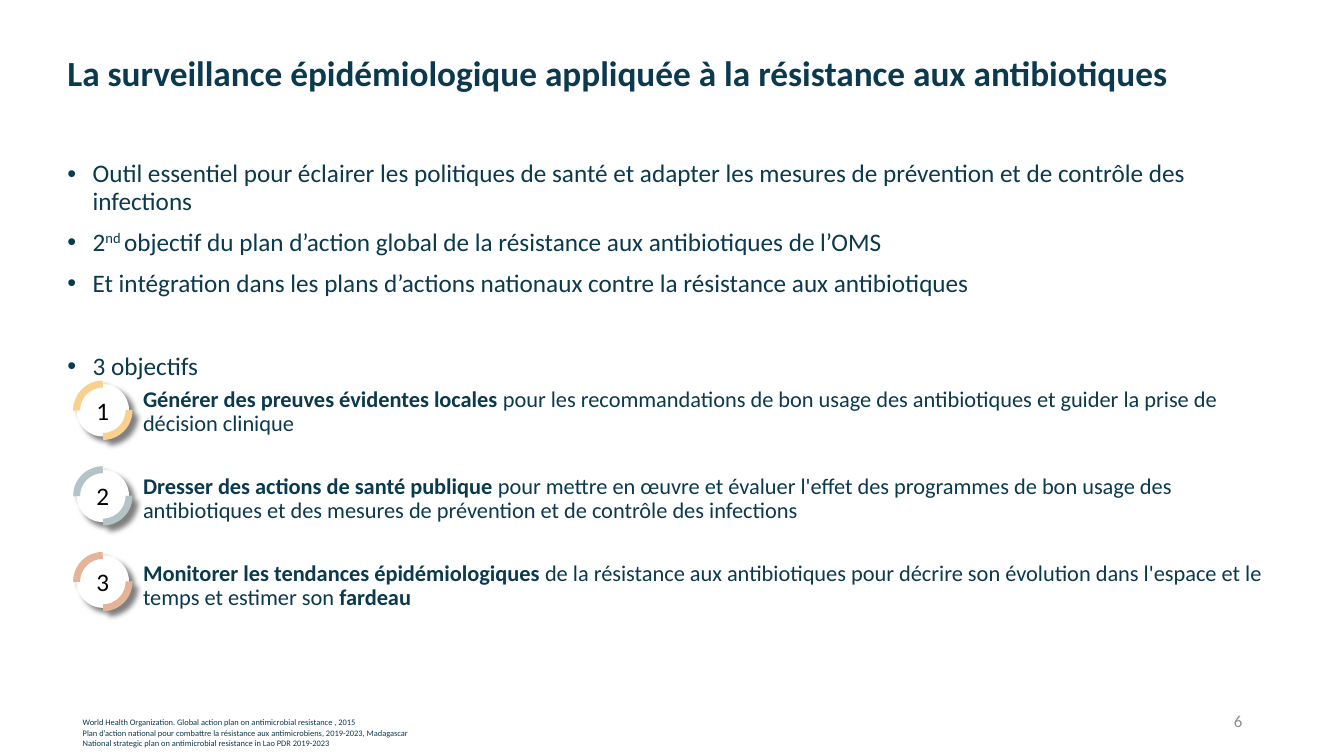
from lxml import etree
from pptx import Presentation
from pptx import util as u
from pptx.dml.color import RGBColor
from pptx.enum import shapes, text
from pptx.oxml import parse_xml
from pptx.oxml.ns import nsdecls, qn

FONT = "Calibri"
HUES = {"ink": "0B394D", "grey": "8C8C8C", "black": "000000", "white": "FFFFFF"}

POINTS = [
    ["Outil essentiel pour éclairer les politiques de santé et adapter les mesures "
     "de prévention et de contrôle des infections"],
    ["2", "nd ", "objectif du plan d’action global de la résistance aux antibiotiques de l’OMS"],
    ["Et intégration dans les plans d’actions nationaux contre la résistance aux antibiotiques"],
    ["3 objectifs"],
]
# Bold and plain parts alternate
GOALS = [
    ("FAD08E", ["Générer des preuves évidentes locales ",
                "pour les recommandations de bon usage des antibiotiques et guider "
                "la prise de décision clinique"]),
    ("B4C3C7", ["Dresser des actions de santé publique ",
                "pour mettre en œuvre et évaluer l'effet des programmes de bon usage des "
                "antibiotiques et des mesures de prévention et de contrôle des infections"]),
    ("E4B398", ["Monitorer les tendances épidémiologiques ",
                "de la résistance aux antibiotiques pour décrire son évolution dans "
                "l'espace et le temps et estimer son ",
                "fardeau"]),
]
SOURCES = [
    "World Health Organization. Global action plan on antimicrobial resistance , 2015",
    "Plan d’action national pour combattre la résistance aux antimicrobiens, 2019-2023, Madagascar",
    "National strategic plan on antimicrobial resistance in Lao PDR 2019-2023",
]


def style(font, size, hue="ink", bold=False):
    font.name = FONT
    font.size = u.Pt(size)
    font.bold = bold
    font.color.rgb = RGBColor.from_string(HUES[hue])


def add_box(slide, left, top, width, height, anchor="TOP", wrap=True):
    box = slide.shapes.add_textbox(*map(u.Inches, (left, top, width, height)))
    frame = box.text_frame
    frame.word_wrap = wrap
    frame.vertical_anchor = getattr(text.MSO_ANCHOR, anchor)
    return frame


def set_pad(frame, pad):
    frame.margin_left = frame.margin_right = u.Inches(pad)
    frame.margin_top = frame.margin_bottom = u.Inches(pad)


def add_line(frame, label, size, hue="ink", bold=False):
    first = frame.paragraphs[0]
    para = frame.add_paragraph() if first.runs else first
    para.text = label
    for run in para.runs:
        style(run.font, size, hue, bold)
    return para


def add_item(frame, parts, size, gap, indent, bullet):
    para = add_line(frame, parts[0], size)
    para.line_spacing = 0.9
    if gap:
        para.space_before = u.Pt(gap)
    props = para._p.get_or_add_pPr()
    props.set("marL", str(u.Inches(indent)))
    if bullet:
        props.set("indent", str(-u.Inches(0.25)))
        etree.SubElement(props, qn("a:buFont")).set("typeface", "Arial")
        etree.SubElement(props, qn("a:buChar")).set("char", "•")
    for part in parts[1:]:
        run = para.add_run()
        run.text = part
        style(run.font, size)
    return para


def add_body(slide):
    frame = add_box(slide, 0.57, 1.55, 12.22, 5.21)
    for parts, gap in zip(POINTS, (0, 10, 10, 39.8)):
        para = add_item(frame, parts, 18, gap, 0.25, True)
        if len(parts) > 1:
            para.runs[1].font._element.set("baseline", "30000")
    for (_, parts), gap in zip(GOALS, (5, 27.6, 27.6)):
        para = add_item(frame, parts, 16, gap, 0.75, False)
        for run in para.runs[::2]:
            run.font.bold = True


def add_badge(slide, num, hue):
    side = 0.52
    top = 3.81 + 0.85 * (num - 1)
    disc = slide.shapes.add_shape(shapes.MSO_SHAPE.OVAL, *map(u.Inches, (0.76, top, side, side)))
    disc.fill.solid()
    disc.fill.fore_color.rgb = RGBColor.from_string(HUES["white"])
    disc.line.color.rgb = RGBColor.from_string(hue)
    disc.line.width = u.Pt(5)
    # Each dash and gap spans a quarter of the ring
    disc.line._get_or_add_ln().append(parse_xml(
        f'<a:custDash {nsdecls("a")}><a:ds d="588000" sp="588000"/></a:custDash>'))
    disc._element.spPr.append(parse_xml(
        f'<a:effectLst {nsdecls("a")}><a:outerShdw blurRad="{u.Pt(4)}" dist="{u.Pt(5)}" '
        f'dir="2700000" algn="tl" rotWithShape="0"><a:srgbClr val="{HUES["black"]}">'
        '<a:alpha val="50000"/></a:srgbClr></a:outerShdw></a:effectLst>'))
    frame = disc.text_frame
    set_pad(frame, 0.05)
    frame.vertical_anchor = text.MSO_ANCHOR.MIDDLE
    add_line(frame, str(num), 18, "black").alignment = text.PP_ALIGN.CENTER


def main():
    deck = Presentation()
    deck.slide_width, deck.slide_height = u.Inches(13.33), u.Inches(7.5)
    slide = deck.slides.add_slide(deck.slide_layouts[6])

    # Title
    title = add_box(slide, 0.57, 0.4, 12.22, 0.7, "MIDDLE")
    add_line(title, "La surveillance épidémiologique appliquée à la résistance aux antibiotiques",
             25.2, bold=True).line_spacing = 0.9

    # Points and numbered goals
    add_body(slide)
    for num, (hue, _) in enumerate(GOALS, 1):
        add_badge(slide, num, hue)

    # Slide number and sources
    page = add_box(slide, 9.42, 6.95, 3, 0.4, "MIDDLE")
    add_line(page, "6", 12, "grey").alignment = text.PP_ALIGN.RIGHT
    notes = add_box(slide, 0.77, 7.07, 3.39, 0.4, wrap=False)
    set_pad(notes, 0.05)
    for source in SOURCES:
        add_line(notes, source, 6)

    deck.save("out.pptx")


if __name__ == "__main__":
    main()
